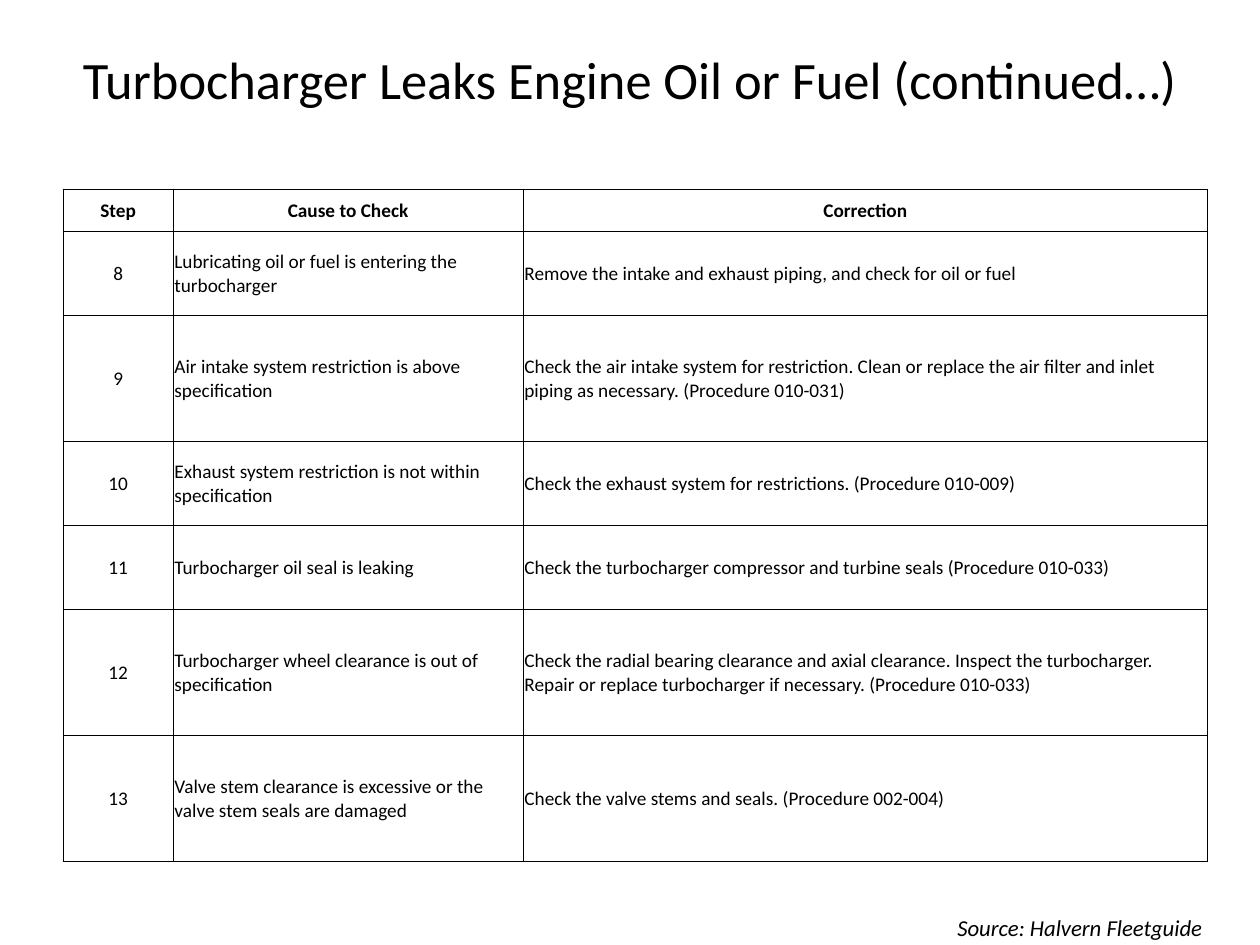
from dataclasses import dataclass

from lxml.etree import fromstring
from pptx import Presentation
from pptx.dml.color import RGBColor as RGB
from pptx.enum.text import MSO_ANCHOR as Anchor, PP_ALIGN as Align
from pptx.oxml.ns import nsdecls
from pptx.util import Pt


@dataclass(frozen=True)
class Theme:
    font: str = "Calibri"
    ink: str = "000000"
    title: float = 30
    cell: float = 11
    note: float = 13
    rule: float = 0.5


TITLE = "Turbocharger Leaks Engine Oil or Fuel (continued…)"
HEAD = ("Step", "Cause to Check", "Correction")
STEPS = [
    ("8", "Lubricating oil or fuel is entering the turbocharger",
     "Remove the intake and exhaust piping, and check for oil or fuel"),
    ("9", "Air intake system restriction is above specification",
     "Check the air intake system for restriction. Clean or replace the air "
     "filter and inlet piping as necessary. (Procedure 010-031)"),
    ("10", "Exhaust system restriction is not within specification",
     "Check the exhaust system for restrictions. (Procedure 010-009)"),
    ("11", "Turbocharger oil seal is leaking",
     "Check the turbocharger compressor and turbine seals (Procedure 010-033)"),
    ("12", "Turbocharger wheel clearance is out of specification",
     "Check the radial bearing clearance and axial clearance. Inspect the "
     "turbocharger. Repair or replace turbocharger if necessary. "
     "(Procedure 010-033)"),
    ("13", "Valve stem clearance is excessive or the valve stem seals are damaged",
     "Check the valve stems and seals. (Procedure 002-004)"),
]
NOTE = "Source: Halvern Fleetguide"

# Row heights are whole multiples of the header height
UNIT = 24
ROWS = [UNIT * n for n in (1, 2, 3, 2, 2, 3, 3)]
COLS = (63, 200, 391)


class Page:
    def __init__(self, deck, theme):
        self.theme = theme
        self.slide = deck.slides.add_slide(deck.slide_layouts[5])

    def style(self, para, text, size, align=Align.LEFT, bold=False, slant=False):
        para.text = text
        para.alignment = align
        font = para.font
        font.name, font.size = self.theme.font, Pt(size)
        font.bold, font.italic = bold, slant
        font.color.rgb = RGB.from_string(self.theme.ink)

    def title(self, text, left, top, width, height):
        box = self.slide.shapes.title
        box.left, box.top = Pt(left), Pt(top)
        box.width, box.height = Pt(width), Pt(height)
        frame = box.text_frame
        frame.vertical_anchor = Anchor.MIDDLE
        self.style(frame.paragraphs[0], text, self.theme.title, Align.CENTER)

    def note(self, text, left, top, width, height):
        box = self.slide.shapes.add_textbox(Pt(left), Pt(top), Pt(width), Pt(height))
        frame = box.text_frame
        frame.word_wrap = True
        self.style(frame.paragraphs[0], text, self.theme.note, slant=True)

    def table(self, data, left, top, cols, rows):
        table = self.slide.shapes.add_table(
            len(rows), len(cols), Pt(left), Pt(top), Pt(sum(cols)), Pt(sum(rows))
        ).table
        table.first_row = table.horz_banding = False
        for col, width in zip(table.columns, cols):
            col.width = Pt(width)
        for row, height in zip(table.rows, rows):
            row.height = Pt(height)
        for r, texts in enumerate(data):
            for c, text in enumerate(texts):
                self.cell(table.cell(r, c), text, r == 0, c == 0)

    def cell(self, cell, text, head, step):
        cell.fill.background()
        cell.vertical_anchor = Anchor.MIDDLE
        cell.margin_left = cell.margin_right = cell.margin_top = Pt(0.7)
        cell.margin_bottom = Pt(0)
        align = Align.CENTER if head or step else Align.LEFT
        self.style(cell.text_frame.paragraphs[0], text, self.theme.cell, align, head)
        # Borders come before the fill in the cell properties
        props = cell._tc.get_or_add_tcPr()
        for i, side in enumerate("LRTB"):
            props.insert(i, fromstring(
                f'<a:ln{side} {nsdecls("a")} w="{Pt(self.theme.rule)}"><a:solidFill>'
                f'<a:srgbClr val="{self.theme.ink}"/></a:solidFill></a:ln{side}>'))


def main():
    deck = Presentation()
    deck.slide_width, deck.slide_height = Pt(720), Pt(540)
    page = Page(deck, Theme())
    page.title(TITLE, 36, 0, 648, 90)
    page.note(NOTE, 540, 518.4, 180, 23)
    page.table([HEAD, *STEPS], 36, 108, COLS, ROWS)
    deck.save("out.pptx")


if __name__ == "__main__":
    main()
